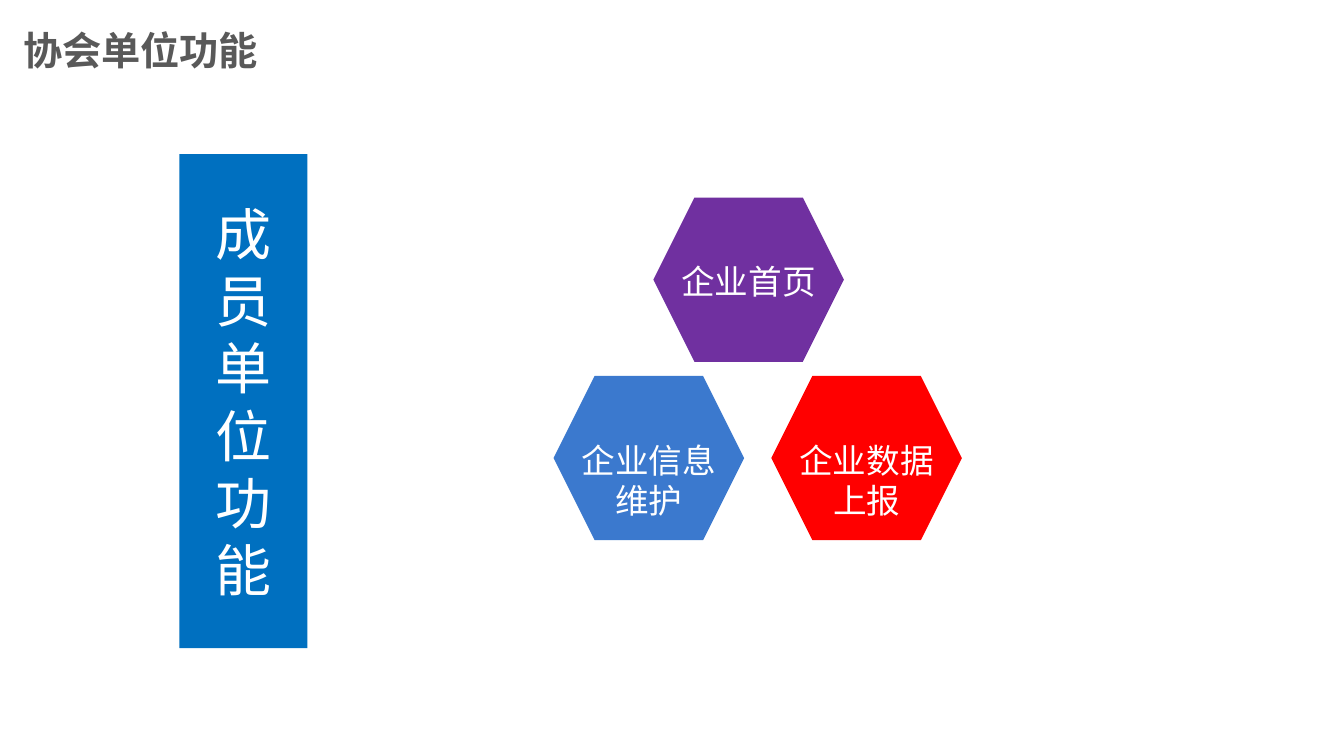
from dataclasses import dataclass

from lxml import etree
from pptx import Presentation
from pptx.dml.color import RGBColor
from pptx.enum import shapes, text
from pptx.oxml import ns
from pptx.util import Inches, Pt

FONT = "Noto Sans CJK SC"
WHITE = "FFFFFF"
HEX_WIDTH, HEX_HEIGHT = 1.89, 1.63
LABEL_WIDTH, LABEL_DROP, LINE_HEIGHT = 2.05, 0.58, 0.41


@dataclass(frozen=True)
class Feature:
    lines: tuple[str, ...]
    left: float
    top: float
    color: str


FEATURES = (
    Feature(("企业首页",), 6.48, 1.96, "7030A0"),
    Feature(("企业信息", "维护"), 5.49, 3.73, "3B79CE"),
    Feature(("企业数据", "上报"), 7.65, 3.73, "FF0000"),
)


def rgb(value: str) -> RGBColor:
    return RGBColor.from_string(value)


def write(frame, lines: tuple[str, ...], size: int, color: str = WHITE,
          align=text.PP_ALIGN.CENTER, anchor=text.MSO_ANCHOR.TOP,
          bold: bool = False, spacing: float = 1.0) -> None:
    frame.word_wrap = True
    frame.vertical_anchor = anchor
    paragraph_format = {"alignment": align, "line_spacing": spacing}
    font_format = {"name": FONT, "size": Pt(size), "bold": bold}
    for index, line in enumerate(lines):
        paragraph = frame.add_paragraph() if index else frame.paragraphs[0]
        for name, value in paragraph_format.items():
            setattr(paragraph, name, value)
        run = paragraph.add_run()
        run.text = line
        for name, value in font_format.items():
            setattr(run.font, name, value)
        run.font.color.rgb = rgb(color)
        # Chinese glyphs take their typeface from the East Asian font slot
        east_asian = etree.SubElement(run._r.get_or_add_rPr(), ns.qn("a:ea"))
        east_asian.set("typeface", FONT)


def add_block(slide, kind, left: float, top: float, width: float,
              height: float, color: str):
    """Add a flat preset shape without outline or shadow."""
    block = slide.shapes.add_shape(
        kind, Inches(left), Inches(top), Inches(width), Inches(height))
    block.shadow.inherit = False
    block.fill.solid()
    block.fill.fore_color.rgb = rgb(color)
    block.line.fill.background()
    return block


def add_text_frame(slide, left: float, top: float, width: float, height: float):
    return slide.shapes.add_textbox(
        Inches(left), Inches(top), Inches(width), Inches(height)).text_frame


def add_feature(slide, feature: Feature) -> None:
    """Draw a hexagon with its label centred across it."""
    add_block(slide, shapes.MSO_SHAPE.HEXAGON, feature.left, feature.top,
              HEX_WIDTH, HEX_HEIGHT, feature.color)
    label = add_text_frame(
        slide, feature.left + (HEX_WIDTH - LABEL_WIDTH) / 2,
        feature.top + LABEL_DROP, LABEL_WIDTH,
        0.09 + LINE_HEIGHT * len(feature.lines))
    write(label, feature.lines, 24)


def main() -> None:
    deck = Presentation()
    deck.slide_width, deck.slide_height = Inches(13.33), Inches(7.5)
    slide = deck.slides.add_slide(deck.slide_layouts[6])

    title = add_text_frame(slide, 0.13, 0.17, 10.62, 0.7)
    write(title, ("协会单位功能",), 28, "595959", text.PP_ALIGN.LEFT,
          text.MSO_ANCHOR.MIDDLE, bold=True, spacing=0.9)

    # The banner is narrow enough to wrap after every character
    banner = add_block(slide, shapes.MSO_SHAPE.RECTANGLE,
                       1.78, 1.53, 1.27, 4.9, "0070C0")
    write(banner.text_frame, ("成员单位功能",), 40,
          anchor=text.MSO_ANCHOR.MIDDLE)

    for feature in FEATURES:
        add_feature(slide, feature)

    deck.save("out.pptx")


if __name__ == "__main__":
    main()
